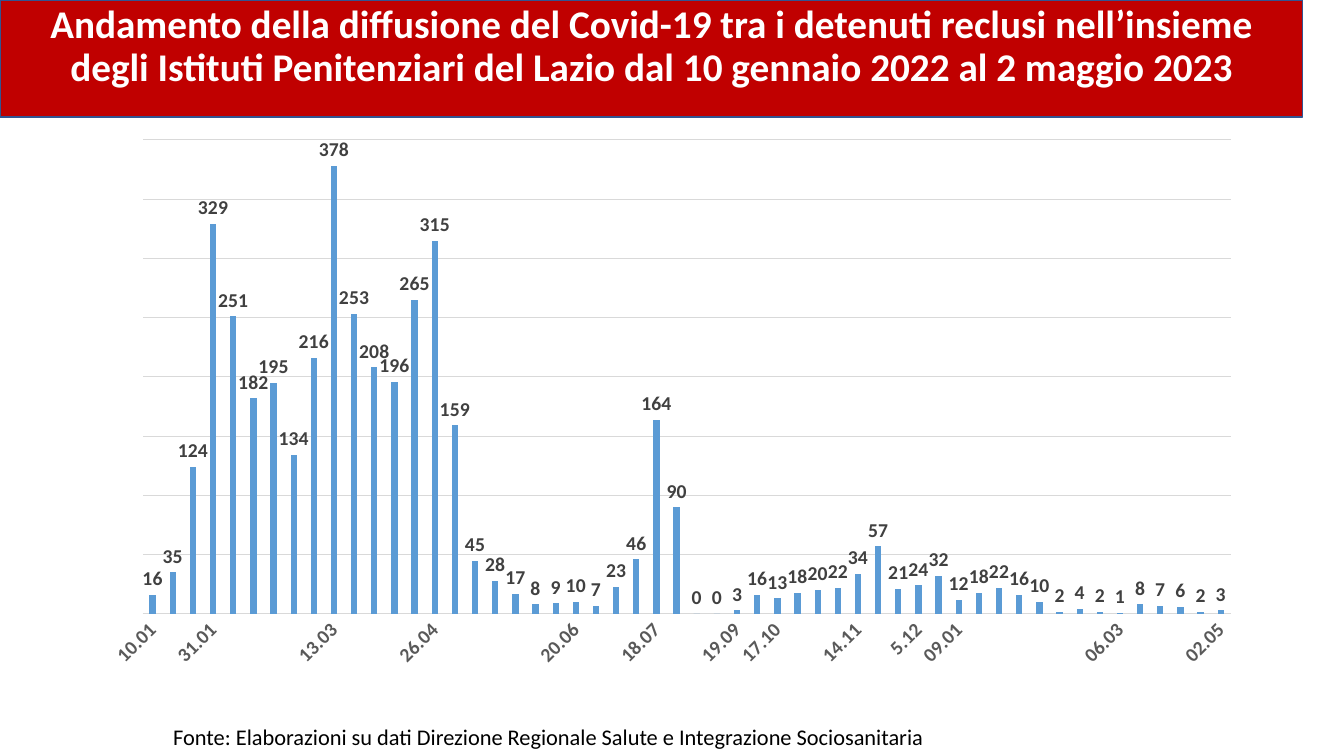
from dataclasses import dataclass

from lxml import etree
from pptx import Presentation
from pptx import util as u
from pptx.chart.data import CategoryChartData
from pptx.dml.color import RGBColor
from pptx.enum import chart as ch
from pptx.enum import text
from pptx.oxml import ns

TITLE = ("Andamento della diffusione del Covid-19 tra i detenuti reclusi nell’insieme "
         "degli Istituti Penitenziari del Lazio dal 10 gennaio 2022 al 2 maggio 2023")
SOURCE = "Fonte: Elaborazioni su dati Direzione Regionale Salute e Integrazione Sociosanitaria"
CASES = [16, 35, 124, 329, 251, 182, 195, 134, 216, 378, 253, 208, 196, 265, 315, 159, 45, 28,
         17, 8, 9, 10, 7, 23, 46, 164, 90, 0, 0, 3, 16, 13, 18, 20, 22, 34,
         57, 21, 24, 32, 12, 18, 22, 16, 10, 2, 4, 2, 1, 8, 7, 6, 2, 3]
# Only some surveys carry a date: position in CASES -> label
DATES = {0: "10.01", 3: "31.01", 9: "13.03", 14: "26.04", 21: "20.06", 25: "18.07",
         29: "19.09", 31: "17.10", 35: "14.11", 38: "5.12", 40: "09.01", 48: "06.03",
         53: "02.05"}

WIDTH, HEIGHT = 13.33, 7.5
BANNER = (0, 0, 12.92, 1.16)
CHART = (0.87, 1.29, 11.57, 5.45)
FOOTER = (1.62, 7.13, 7.84, 0.37)
PLOT_SHARES = {"x": 0.047, "y": 0.018, "w": 0.933, "h": 0.863}


@dataclass(frozen=True)
class Theme:
    font: str = "Calibri"
    banner: str = "C00000"
    border: str = "325491"
    white: str = "FFFFFF"
    black: str = "000000"
    bar: str = "5B9BD5"
    grid: str = "D9D9D9"
    axis_text: str = "595959"
    label_text: str = "404040"
    title_size: int = 28
    source_size: int = 16
    chart_size: int = 14


THEME = Theme()


def inches(box):
    return [u.Inches(length) for length in box]


def style_font(font, size, color, bold=False):
    font.name, font.size, font.bold = THEME.font, u.Pt(size), bold
    font.color.rgb = RGBColor.from_string(color)


def style_line(line, color, width):
    line.color.rgb = RGBColor.from_string(color)
    line.width = u.Pt(width)


def add_title(slide):
    title = slide.shapes.title
    title.left, title.top, title.width, title.height = inches(BANNER)
    title.fill.solid()
    title.fill.fore_color.rgb = RGBColor.from_string(THEME.banner)
    style_line(title.line, THEME.border, 1)
    frame = title.text_frame
    frame.text = TITLE
    frame.word_wrap = True
    frame.auto_size = text.MSO_AUTO_SIZE.NONE
    frame.vertical_anchor = text.MSO_ANCHOR.TOP
    para = frame.paragraphs[0]
    para.alignment = text.PP_ALIGN.CENTER
    para.line_spacing = 0.9
    para.space_before = u.Pt(10)
    style_font(para.font, THEME.title_size, THEME.white, True)


def set_plot_area(chart):
    """Fix the inner plot rectangle as shares of the chart's frame."""
    area = chart.element.find(".//" + ns.qn("c:plotArea"))
    for old in area.findall(ns.qn("c:layout")):
        area.remove(old)
    layout = etree.Element(ns.qn("c:layout"))
    manual = etree.SubElement(layout, ns.qn("c:manualLayout"))
    settings = {"layoutTarget": "inner", "xMode": "edge", "yMode": "edge", **PLOT_SHARES}
    for name, value in settings.items():
        etree.SubElement(manual, ns.qn("c:" + name)).set("val", str(value))
    area.insert(0, layout)


def add_chart(slide):
    data = CategoryChartData()
    data.categories = [DATES.get(i, "") for i in range(len(CASES))]
    data.add_series("Series 1", CASES)
    chart = slide.shapes.add_chart(
        ch.XL_CHART_TYPE.COLUMN_CLUSTERED, *inches(CHART), data).chart
    chart.has_legend = chart.has_title = False
    style_font(chart.font, THEME.chart_size, THEME.black, True)
    set_plot_area(chart)

    plot = chart.plots[0]
    plot.gap_width, plot.overlap, plot.vary_by_categories = 219, -27, False
    fill = plot.series[0].format.fill
    fill.solid()
    fill.fore_color.rgb = RGBColor.from_string(THEME.bar)
    plot.has_data_labels = True
    labels = plot.data_labels
    labels.show_value = True
    labels.position = ch.XL_LABEL_POSITION.OUTSIDE_END
    style_font(labels.font, THEME.chart_size, THEME.label_text, True)

    dates = chart.category_axis
    dates.major_tick_mark = dates.minor_tick_mark = ch.XL_TICK_MARK.NONE
    style_line(dates.format.line, THEME.grid, 0.75)
    style_font(dates.tick_labels.font, THEME.chart_size, THEME.axis_text, True)
    body = dates._element.find(ns.qn("c:txPr")).find(ns.qn("a:bodyPr"))
    body.set("rot", str(-45 * 60000))
    body.set("vert", "horz")

    values = chart.value_axis
    values.visible = False
    values.minimum_scale, values.maximum_scale, values.major_unit = 0, 400, 50
    values.has_major_gridlines = True
    style_line(values.major_gridlines.format.line, THEME.grid, 0.75)


def add_source(slide):
    frame = slide.shapes.add_textbox(*inches(FOOTER)).text_frame
    frame.text = SOURCE
    frame.word_wrap = False
    frame.auto_size = text.MSO_AUTO_SIZE.SHAPE_TO_FIT_TEXT
    style_font(frame.paragraphs[0].font, THEME.source_size, THEME.black)


def main():
    deck = Presentation()
    deck.slide_width, deck.slide_height = inches((WIDTH, HEIGHT))
    slide = deck.slides.add_slide(deck.slide_layouts.get_by_name("Title Only"))
    add_title(slide)
    add_source(slide)
    add_chart(slide)
    deck.save("out.pptx")


if __name__ == "__main__":
    main()
